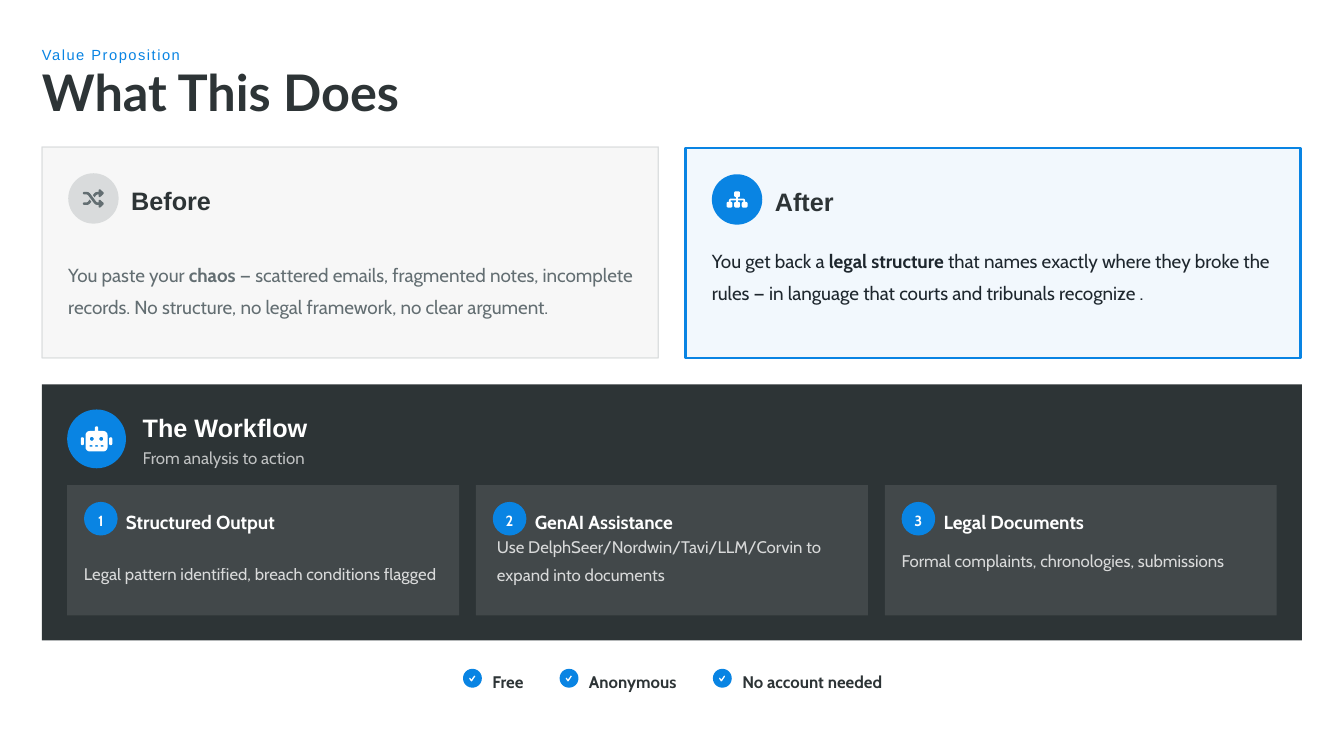
import math

import pptx
import pptx.dml.color
import pptx.enum.shapes
import pptx.enum.text
import pptx.oxml.ns
import pptx.util

SCALE = 9525
BLUE, INK, GREY, WHITE = "0984E3", "2D3436", "636E72", "FFFFFF"
OVAL = pptx.enum.shapes.MSO_SHAPE.OVAL
RECTANGLE = pptx.enum.shapes.MSO_SHAPE.RECTANGLE


def px(length):
    return pptx.util.Emu(round(length * SCALE))


def paint(fill, color, alpha=100):
    fill.solid()
    fill.fore_color.rgb = pptx.dml.color.RGBColor.from_string(color)
    if alpha < 100:
        solid = fill._xPr.find(pptx.oxml.ns.qn("a:solidFill"))
        mark = solid[0].makeelement(pptx.oxml.ns.qn("a:alpha"), {"val": str(alpha * 1000)})
        solid[0].append(mark)


def write(frame, text, size=12, font="Cabin", color=WHITE, alpha=100, bold=False,
          spacing=1.3, tracking=0, center=False):
    frame.word_wrap = True
    frame.margin_left = frame.margin_right = frame.margin_top = frame.margin_bottom = 0
    frame.vertical_anchor = pptx.enum.text.MSO_ANCHOR.MIDDLE
    para = frame.paragraphs[0]
    para.line_spacing = spacing
    para.alignment = pptx.enum.text.PP_ALIGN.CENTER if center else pptx.enum.text.PP_ALIGN.LEFT
    for index, part in enumerate(text.split("**")):
        span = para.add_run()
        span.text = part
        span.font.name = font
        span.font.size = pptx.util.Pt(size)
        span.font.bold = bold or index % 2 == 1
        paint(span.font.fill, color, alpha)
        if tracking:
            span.font._element.set("spc", str(tracking))


def label(page, box, text, **style):
    write(page.shapes.add_textbox(*map(px, box)).text_frame, text, **style)


def block(page, kind, box, color, alpha=100, line=None, line_width=1, line_alpha=100):
    shape = page.shapes.add_shape(kind, *map(px, box))
    shape.shadow.inherit = False
    paint(shape.fill, color, alpha)
    if line:
        shape.line.width = pptx.util.Pt(line_width)
        paint(shape.line.fill, line, line_alpha)
    else:
        shape.line.fill.background()
    return shape


def rounded(x, y, width, height, radius):
    points = []
    corners = [(x + width - radius, y + height - radius), (x + radius, y + height - radius),
               (x + radius, y + radius), (x + width - radius, y + radius)]
    for quarter, (center_x, center_y) in enumerate(corners):
        for step in range(7):
            angle = math.radians(90 * quarter + 15 * step)
            points.append((round(center_x + radius * math.cos(angle)),
                           round(center_y + radius * math.sin(angle))))
    return points


SHUFFLE = [
    [(384, 48), (400, 34), (420, 34), (504, 112), (504, 144), (420, 222), (400, 222),
     (384, 208), (384, 160), (352, 160), (326, 173), (284, 229), (244, 176), (275, 134),
     (310, 106), (352, 96), (384, 96)],
    [(164, 283), (204, 336), (173, 378), (138, 406), (96, 416), (24, 416), (0, 396),
     (0, 372), (24, 352), (96, 352), (122, 339)],
    [(384, 464), (400, 478), (420, 478), (504, 400), (504, 368), (420, 290), (400, 290),
     (384, 304), (384, 352), (352, 352), (326, 339), (173, 134), (138, 106), (96, 96),
     (24, 96), (0, 116), (0, 140), (24, 160), (96, 160), (122, 173), (275, 378),
     (310, 406), (352, 416), (384, 416)],
]
TREE = [rounded(x, y, 160, 160, 48) for x, y in [(208, 32), (0, 320), (208, 320), (416, 320)]] + [
    [(264, 192), (312, 192), (312, 232), (464, 232), (496, 248), (512, 280), (512, 320),
     (464, 320), (464, 280), (312, 280), (312, 320), (264, 320), (264, 280), (112, 280),
     (112, 320), (64, 320), (64, 280), (80, 248), (112, 232), (264, 232)],
]
ROBOT = [
    [(288, 96), (288, 24), (304, 4), (336, 4), (352, 24), (352, 96)],
    rounded(96, 96, 448, 416, 88),
    *[rounded(x, 216, 80, 80, 40) for x in (184, 376)],
    *[rounded(x, 384, 64, 32, 16) for x in (176, 288, 400)],
    *[rounded(x, 224, 64, 160, 32) for x in (0, 576)],
]
CHECK = [
    rounded(0, 0, 512, 512, 256),
    [(305, 178), (340, 200), (245, 342), (218, 345), (160, 260), (188, 234), (228, 285)],
]


def glyph(page, contours, grid, box, color):
    left, top, width, height = box
    unit = width * SCALE / grid
    builder = page.shapes.build_freeform(*contours[0][0], scale=unit)
    for index, points in enumerate(contours):
        if index:
            builder.move_to(*points[0])
        builder.add_line_segments(points[1:], close=True)
    shape = builder.convert_to_shape(px(left), px(top + height / 2) - round(256 * unit))
    shape.shadow.inherit = False
    paint(shape.fill, color)
    shape.line.fill.background()


def badge(page, box, contours, grid, width, color, alpha, ink):
    left, top, size, size = box
    block(page, OVAL, box, color, alpha)
    glyph(page, contours, grid, (left + (size - width) / 2, top, width, size), ink)


def header(page, box):
    left, top, width, height = box
    label(page, (left, top, width, 20), "Value Proposition", size=10.5, font="Arial",
          color=BLUE, spacing=1.2, tracking=110)
    label(page, (left, top + 28, width, 48), "What This Does", size=36, font="Lato",
          color=INK, bold=True, spacing=0.8)


def comparison_card(page, box, title, body, body_height, body_color, icon, edge):
    left, top, width, height = box
    block(page, RECTANGLE, box, edge["line"], 5, **edge)
    badge(page, (left + 25, top + 25, 48, 48), **icon)
    label(page, (left + 85, top + 33, 120, 32), title, size=18, font="Arial",
          color=INK, bold=True, spacing=1.1)
    label(page, (left + 25, top + 89, 546, body_height), body, size=13.5,
          color=body_color, spacing=1.4)


def step_card(page, box, number, title, body, indent, body_height):
    left, top, width, height = box
    block(page, RECTANGLE, box, WHITE, 10)
    circle = block(page, OVAL, (left + 16, top + 16, 32, 32), BLUE)
    write(circle.text_frame, str(number), size=10.5, bold=True, spacing=1.2, center=True)
    label(page, (left + 56, top + 18, 200, 28), title, size=13.5, bold=True)
    label(page, (left + indent, top + 55, 349, body_height), body, alpha=80, spacing=1.4)


def workflow(page, box):
    left, top, width, height = box
    block(page, RECTANGLE, box, INK)
    badge(page, (left + 24, top + 24, 56, 56), ROBOT, 640, 30, BLUE, 100, WHITE)
    label(page, (left + 96, top + 24, 240, 32), "The Workflow", size=18, font="Arial",
          bold=True, spacing=1.1)
    label(page, (left + 96, top + 55, 240, 24), "From analysis to action", alpha=70)
    steps = [
        ("Structured Output", "Legal pattern identified, breach conditions flagged", 16, 52),
        ("GenAI Assistance",
         "Use DelphSeer/Nordwin/Tavi/LLM/Corvin to expand into documents", 20, 26),
        ("Legal Documents", "Formal complaints, chronologies, submissions", 16, 26),
    ]
    gap = 16
    step_width = (width - 48 - 2 * gap) / 3
    for index, step in enumerate(steps):
        step_left = left + 24 + index * (step_width + gap)
        step_card(page, (step_left, top + 96, step_width, 124), index + 1, *step)


def promises(page, box):
    left, top, width, height = box
    for text, text_width in [("Free", 38), ("Anonymous", 92), ("No account needed", 143)]:
        glyph(page, CHECK, 512, (left, top, 18, height), BLUE)
        label(page, (left + 28, top, text_width, height), text, color=INK, bold=True)
        left += 28 + text_width + 26


def main():
    deck = pptx.Presentation()
    deck.slide_width, deck.slide_height = px(1280), px(720)
    page = deck.slides.add_slide(deck.slide_layouts[6])
    header(page, (40, 40, 1224, 76))
    comparison_card(
        page, (40, 140, 587, 201), "Before",
        "You paste your **chaos** — scattered emails, fragmented notes, incomplete records. "
        "No structure, no legal framework, no clear argument.", 88, GREY,
        dict(contours=SHUFFLE, grid=512, width=20, color=GREY, alpha=20, ink=GREY),
        dict(line=GREY, line_width=1, line_alpha=20))
    comparison_card(
        page, (653, 141, 586, 200), "After",
        "You get back a **legal structure** that names exactly where they broke the rules — "
        "in language that courts and tribunals recognize .", 59, "1E272E",
        dict(contours=TREE, grid=576, width=20, color=BLUE, alpha=100, ink=WHITE),
        dict(line=BLUE, line_width=2))
    workflow(page, (40, 366, 1200, 244))
    promises(page, (441, 634, 400, 24))
    deck.save("out.pptx")


if __name__ == "__main__":
    main()
